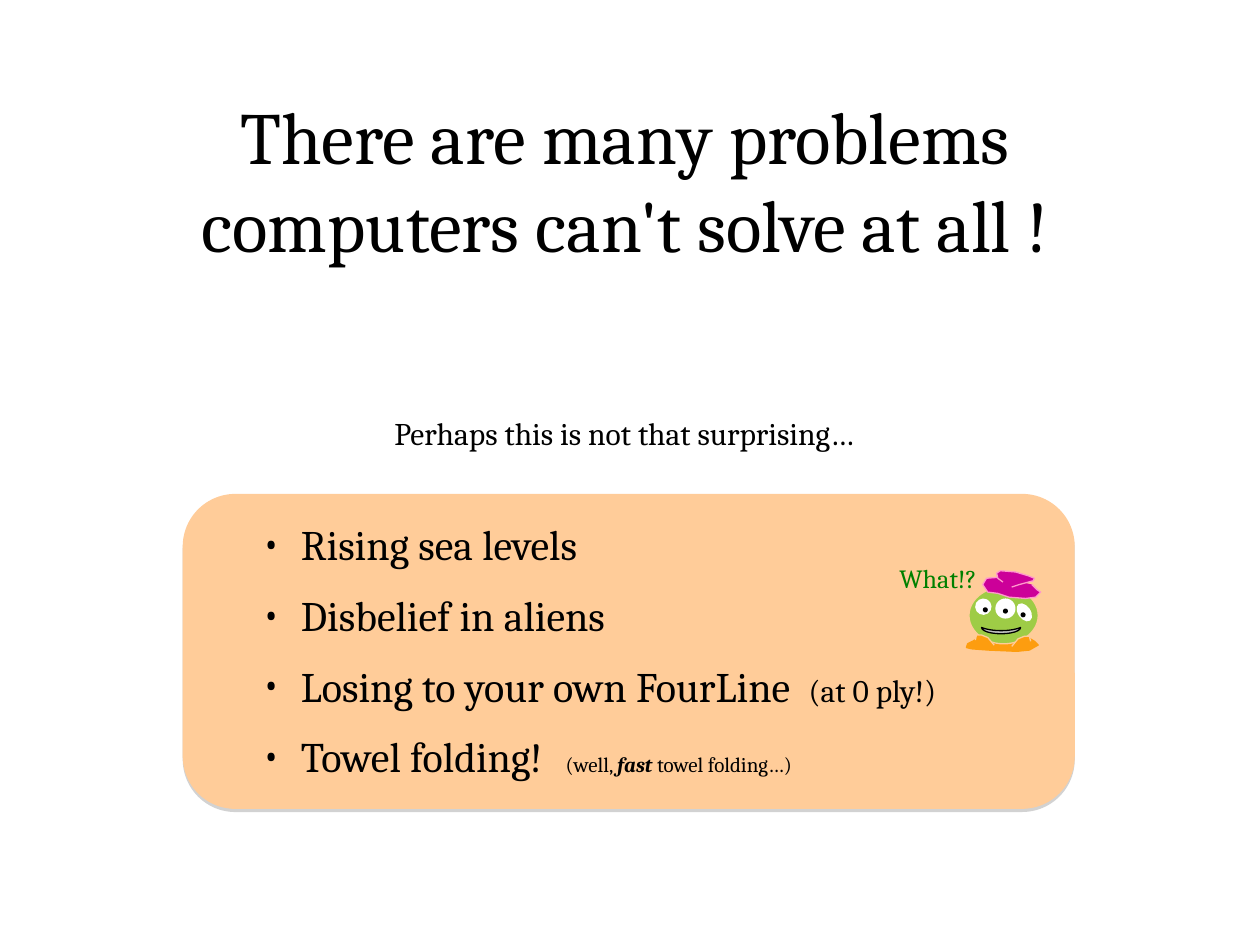
from dataclasses import dataclass

from lxml import etree
from pptx import Presentation
from pptx.dml.color import RGBColor
from pptx.enum.shapes import MSO_SHAPE
from pptx.enum.text import MSO_AUTO_SIZE, PP_ALIGN
from pptx.oxml import parse_xml
from pptx.oxml.ns import qn
from pptx.util import Inches, Pt

CENTER, LEFT, RIGHT = PP_ALIGN.CENTER, PP_ALIGN.LEFT, PP_ALIGN.RIGHT
OVAL, MOON, ROUNDED = MSO_SHAPE.OVAL, MSO_SHAPE.MOON, MSO_SHAPE.ROUNDED_RECTANGLE
FIT_SHAPE = MSO_AUTO_SIZE.SHAPE_TO_FIT_TEXT
DRAWING_NAMESPACE = "http://schemas.openxmlformats.org/drawingml/2006/main"


@dataclass(frozen=True)
class Theme:
    font: str = "Cambria"
    black: str = "000000"
    white: str = "FFFFFF"
    panel: str = "FFCC99"
    skin: str = "9ECC46"
    feet: str = "FD9D0F"
    hat: str = "CC0099"
    hat_edge: str = "FF99CC"
    mouth: str = "C0C0C0"
    speech: str = "008000"
    title_size: int = 42
    bullet_size: int = 24
    body_size: int = 18
    speech_size: int = 15
    aside_size: int = 12
    line_width: float = 0.75


class SlideBuilder:
    """Adds styled elements to one slide."""

    def __init__(self, slide, theme):
        self.slide = slide
        self.theme = theme
        self.shapes = slide.shapes

    def start_group(self):
        self.shapes = self.slide.shapes.add_group_shape().shapes

    def end_group(self):
        self.shapes = self.slide.shapes

    def paint(self, shape, fill, line):
        shape.shadow.inherit = False
        shape.fill.solid()
        shape.fill.fore_color.rgb = RGBColor.from_string(fill)
        if line:
            shape.line.color.rgb = RGBColor.from_string(line)
            shape.line.width = Pt(self.theme.line_width)
        else:
            shape.line.fill.background()
        return shape

    def preset(self, kind, box, fill, line=None, rotation=0):
        shape = self.shapes.add_shape(kind, *map(Inches, box))
        shape.rotation = rotation
        return self.paint(shape, fill, line)

    def panel(self, box):
        shape = self.preset(ROUNDED, box, self.theme.panel)
        shape.adjustments[0] = 0.167
        effects = shape._element.spPr.find(qn("a:effectLst"))
        effects.append(parse_xml(
            f'<a:outerShdw xmlns:a="{DRAWING_NAMESPACE}" dist="{Pt(1.8)}" dir="5400000">'
            '<a:srgbClr val="808080"><a:alpha val="35000"/></a:srgbClr></a:outerShdw>'))

    def outline(self, points, fill, line, closed=False):
        start, *others = [tuple(map(Inches, point)) for point in points]
        builder = self.shapes.build_freeform(*start)
        builder.add_line_segments(others, close=closed)
        self.paint(builder.convert_to_shape(), fill, line)

    def text(self, box, runs, size, align=LEFT, color=None):
        shape = self.shapes.add_textbox(*map(Inches, box))
        frame = shape.text_frame
        frame.word_wrap = True
        frame.auto_size = FIT_SHAPE
        paragraph = frame.paragraphs[0]
        paragraph.alignment = align
        paragraph.font.name = self.theme.font
        paragraph.font.color.rgb = RGBColor.from_string(color or self.theme.black)
        paragraph.font.size = Pt(size)
        for words, run_size, emphasis in runs:
            run = paragraph.add_run()
            run.text = words
            if run_size != size:
                run.font.size = Pt(run_size)
            if emphasis:
                run.font.bold = run.font.italic = True
        return paragraph

    def label(self, box, words, size, align, color=None):
        self.text(box, [(words, size, False)], size, align, color)

    def bullet(self, box, runs):
        paragraph = self.text(box, runs, self.theme.bullet_size)
        properties = paragraph._p.get_or_add_pPr()
        properties.set("marL", str(Inches(0.31)))
        properties.set("indent", str(-Inches(0.31)))
        for element in (etree.Element(qn("a:buFont"), typeface=self.theme.font),
                        etree.Element(qn("a:buChar"), char="•")):
            properties.insert_element_before(element, "a:tabLst", "a:defRPr", "a:extLst")

    def alien(self):
        theme = self.theme
        self.start_group()
        self.outline([
            (7.96, 5.02), (8.06, 5.02), (8.16, 5.06), (8.21, 5.09), (8.24, 5.12),
            (8.17, 5.16), (8.07, 5.17), (7.84, 5.16), (7.71, 5.15), (7.67, 5.14),
            (7.68, 5.11), (7.72, 5.09), (7.78, 5.05), (7.82, 5.04), (7.87, 5.01)],
            theme.feet, theme.feet, closed=True)
        self.preset(OVAL, (7.69, 4.66, 0.55, 0.45), theme.skin, theme.panel)
        for box, rotation in (((7.74, 4.75, 0.13, 0.13), 327.2),
                              ((7.9, 4.75, 0.16, 0.16), 0),
                              ((8.08, 4.78, 0.1, 0.16), 325.5)):
            self.preset(OVAL, box, theme.white, rotation=rotation)
        for left, top in ((7.8, 4.82), (7.96, 4.83), (8.1, 4.86)):
            self.preset(OVAL, (left, top, 0.04, 0.04), theme.black)
        self.preset(MOON, (7.92, 4.85, 0.05, 0.31), theme.mouth, theme.black, 270)
        self.outline([
            (7.95, 4.58), (7.83, 4.59), (7.8, 4.64), (7.84, 4.7), (7.92, 4.71),
            (8.01, 4.74), (8.14, 4.75), (8.22, 4.74), (8.26, 4.7), (8.23, 4.68),
            (8.19, 4.64)], theme.hat, theme.hat_edge)
        self.outline([
            (7.96, 4.62), (7.92, 4.59), (7.91, 4.55), (7.94, 4.53), (8.06, 4.54),
            (8.16, 4.57), (8.21, 4.59), (8.2, 4.61), (8.09, 4.64), (8.03, 4.66)],
            theme.hat, theme.hat_edge)
        leg = [(7.74, 5.08), (7.75, 5.04), (7.79, 5.04), (7.84, 5.06), (7.89, 5.12)]
        mirrored_leg = [(15.92 - x, y + 0.01) for x, y in leg]
        for points in (leg, mirrored_leg):
            self.outline(points, theme.feet, theme.panel)
        self.end_group()


def main():
    presentation = Presentation()
    presentation.slide_width, presentation.slide_height = Inches(10), Inches(7.5)
    theme = Theme()
    slide = SlideBuilder(presentation.slides.add_slide(presentation.slide_layouts[6]), theme)

    slide.panel((1.45, 3.92, 7.08, 2.5))
    slide.label((2.37, 3.24, 5.17, 0.4), "Perhaps this is not that surprising…",
                theme.body_size, CENTER)
    slide.label((1.29, 0.67, 7.34, 1.51),
                "There are many problems computers can't solve at all !", theme.title_size, CENTER)
    large, small = theme.bullet_size, theme.aside_size
    bullets = [
        (4.52, [("Rising sea levels", large, False)]),
        (3.21, [("Disbelief in aliens", large, False)]),
        (5.82, [("Losing to your own FourLine  ", large, False),
                ("(at 0 ply!)", theme.body_size, False)]),
        (6.2, [("Towel folding!  ", large, False), (" (well, ", small, False),
               ("fast", small, True), (" towel folding…)", small, False)]),
    ]
    for row, (width, runs) in enumerate(bullets):
        slide.bullet((1.98, 4.07 + 0.56 * row, width, 0.5), runs)
    slide.alien()
    slide.label((6.08, 4.41, 1.77, 0.35), "What!?", theme.speech_size, RIGHT, theme.speech)
    presentation.save("out.pptx")


if __name__ == "__main__":
    main()
